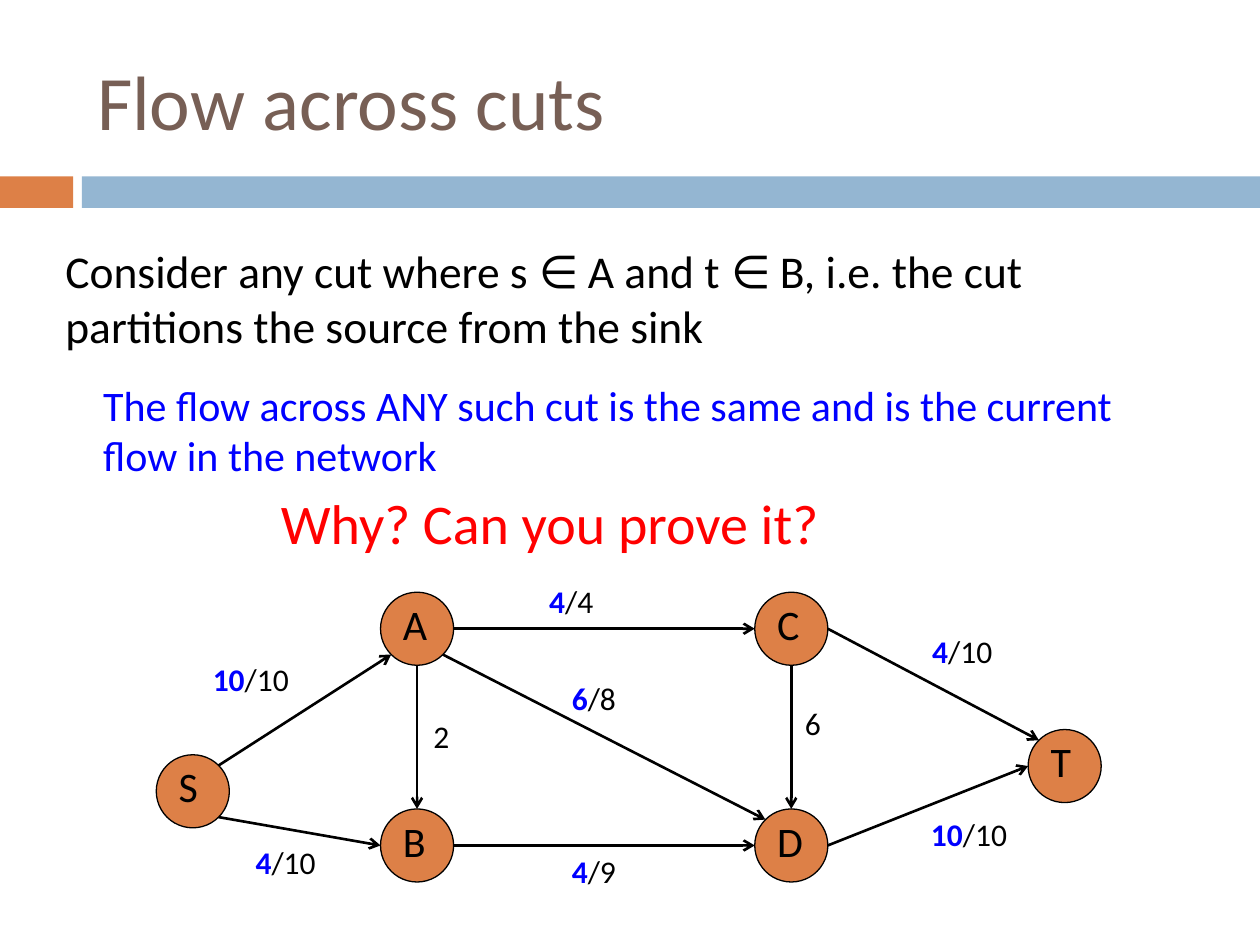
from math import hypot

from lxml import etree
from pptx import Presentation
from pptx.dml.color import RGBColor
from pptx.enum.shapes import MSO_CONNECTOR, MSO_SHAPE
from pptx.enum.text import MSO_ANCHOR, PP_ALIGN
from pptx.oxml.ns import qn
from pptx.util import Inches, Pt

RECTANGLE, OVAL = MSO_SHAPE.RECTANGLE, MSO_SHAPE.OVAL
STRAIGHT = MSO_CONNECTOR.STRAIGHT
MIDDLE, LEFT = MSO_ANCHOR.MIDDLE, PP_ALIGN.LEFT

FONT = "Calibri"
ORANGE, STEEL, BROWN = "DD8047", "94B6D2", "775F55"
BLACK, BLUE, RED = "000000", "0000FF", "FF0000"

DIAMETER = 0.58
NODES = {  # centre of each vertex
    "S": (1.53, 6.28),
    "A": (3.31, 4.99),
    "B": (3.31, 6.71),
    "C": (6.28, 4.99),
    "D": (6.28, 6.71),
    "T": (8.45, 6.08),
}
UP, DOWN, WEST, EAST = (0, -1), (0, 1), (-1, 0), (1, 0)
NW, NE, SW, SE = (-1, -1), (1, -1), (-1, 1), (1, 1)
EDGES = [  # from, side left, to, side entered, flow, capacity, label position
    ("S", NE, "A", SW, "10", "/10", (1.59, 5.19)),
    ("S", SE, "B", WEST, "4", "/10", (1.93, 6.64)),
    ("A", EAST, "C", WEST, "4", "/4", (4.26, 4.57)),
    ("A", DOWN, "B", UP, "", "2", (3.34, 5.64)),
    ("A", SE, "D", NW, "6", "/8", (4.44, 5.34)),
    ("B", EAST, "D", WEST, "4", "/9", (4.44, 6.71)),
    ("C", DOWN, "D", UP, "", "6", (6.29, 5.54)),
    ("C", EAST, "T", NW, "4", "/10", (7.3, 4.97)),
    ("D", EAST, "T", WEST, "10", "/10", (7.29, 6.42)),
]


def rgb(color):
    return RGBColor.from_string(color)


def style_font(font, size, color):
    font.name, font.size = FONT, Pt(size)
    font.color.rgb = rgb(color)


def add_box(slide, kind, left, top, width, height, color):
    box = slide.shapes.add_shape(
        kind, Inches(left), Inches(top), Inches(width), Inches(height))
    box.shadow.inherit = False
    box.fill.solid()
    box.fill.fore_color.rgb = rgb(color)
    box.line.fill.background()
    return box


def add_text(slide, left, top, width, height, text, size, color):
    box = slide.shapes.add_textbox(
        Inches(left), Inches(top), Inches(width), Inches(height))
    box.text_frame.word_wrap = True
    paragraph = box.text_frame.paragraphs[0]
    paragraph.text = text
    style_font(paragraph.font, size, color)
    return paragraph


def add_title(slide, text):
    title = slide.shapes.title
    title.left, title.top = Inches(0.67), Inches(0.25)
    title.width, title.height = Inches(8.92), Inches(1.08)
    title.text_frame.vertical_anchor = MIDDLE
    paragraph = title.text_frame.paragraphs[0]
    paragraph.text = text
    paragraph.alignment = LEFT
    style_font(paragraph.font, 44, BROWN)


def add_node(slide, name):
    x, y = NODES[name]
    left, top = x - DIAMETER / 2, y - DIAMETER / 2
    circle = add_box(slide, OVAL, left, top, DIAMETER, DIAMETER, ORANGE)
    circle.line.color.rgb = rgb(BLACK)
    circle.line.width = Pt(0.75)
    add_text(slide, left + 0.08, top, 0.5, 0.5, name, 24, BLACK)


def rim_point(name, side):
    """Point on the vertex circle in the direction of side."""
    reach = DIAMETER / 2 / hypot(*side)
    return [Inches(c + d * reach) for c, d in zip(NODES[name], side)]


def add_edge(slide, start, start_side, end, end_side):
    edge = slide.shapes.add_connector(
        STRAIGHT, *rim_point(start, start_side), *rim_point(end, end_side))
    edge.line.color.rgb = rgb(BLACK)
    edge.line.width = Pt(1.5)
    etree.SubElement(edge.line._get_or_add_ln(), qn("a:tailEnd"), type="arrow")
    etree.SubElement(edge._element.spPr, qn("a:effectLst"))


def add_flow_label(slide, position, flow, capacity):
    label = add_text(slide, *position, 0.95, 0.4, flow, 18, BLACK)
    if flow:
        label.runs[0].font.bold = True
        label.runs[0].font.color.rgb = rgb(BLUE)
    label.add_run().text = capacity


def main():
    prs = Presentation()
    prs.slide_width, prs.slide_height = Inches(10), Inches(7.5)
    slide = prs.slides.add_slide(prs.slide_layouts[5])

    add_box(slide, RECTANGLE, 0, 1.4, 0.58, 0.25, ORANGE)
    add_box(slide, RECTANGLE, 0.65, 1.4, 9.35, 0.25, STEEL)
    add_title(slide, "Flow across cuts")

    for name in NODES:
        add_node(slide, name)
    for start, start_side, end, end_side, flow, capacity, position in EDGES:
        add_edge(slide, start, start_side, end, end_side)
        add_flow_label(slide, position, flow, capacity)

    add_text(slide, 0.42, 1.88, 9.08, 1.09,
             "Consider any cut where s ∈ A and t ∈ B, i.e. the cut "
             "partitions the source from the sink", 26, BLACK)
    add_text(slide, 0.72, 2.96, 8.52, 0.91,
             "The flow across ANY such cut is the same and is the current "
             "flow in the network", 24, BLUE)
    add_text(slide, 2.13, 3.83, 4.62, 0.64, "Why? Can you prove it?", 32, RED)

    prs.save("out.pptx")


if __name__ == "__main__":
    main()
